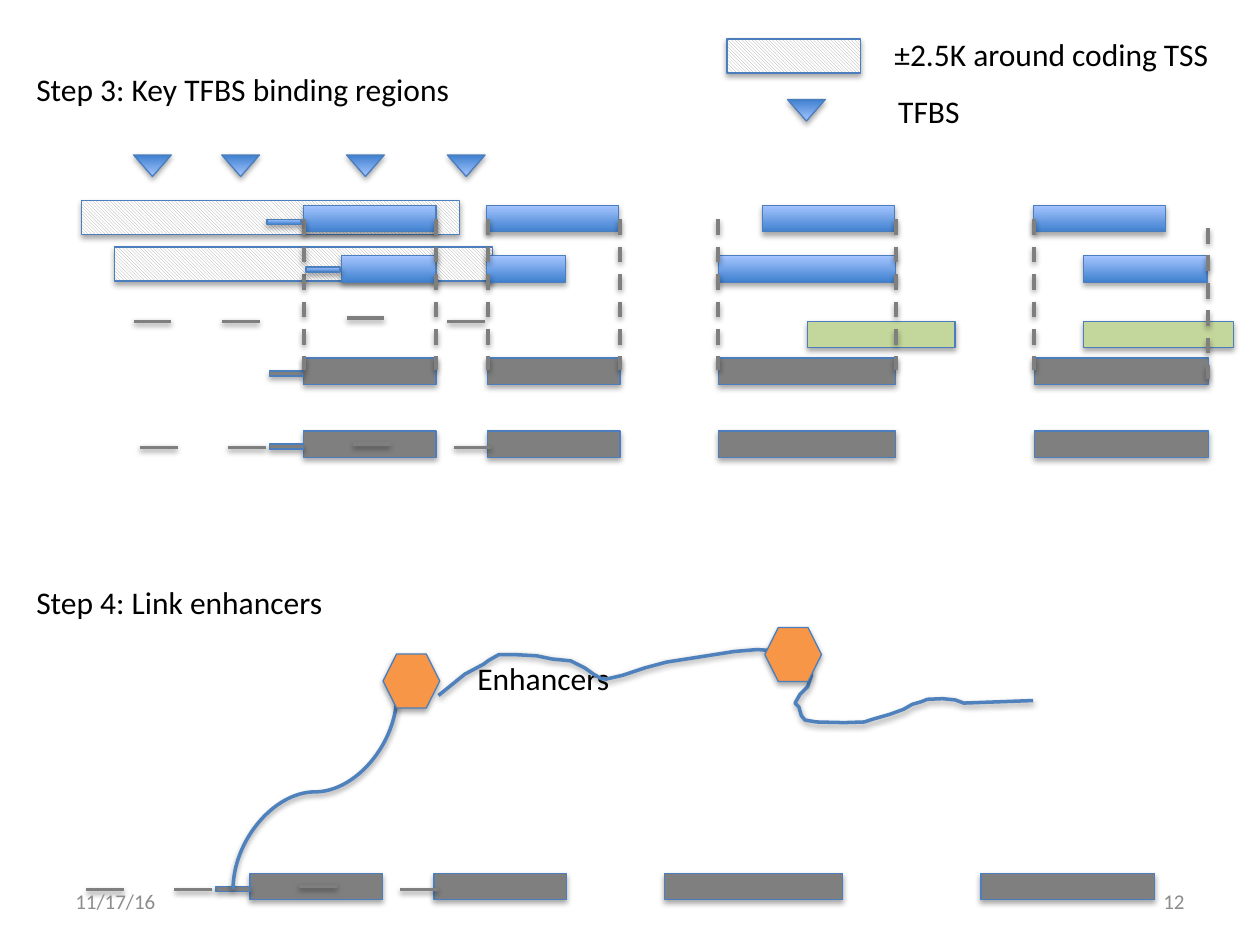
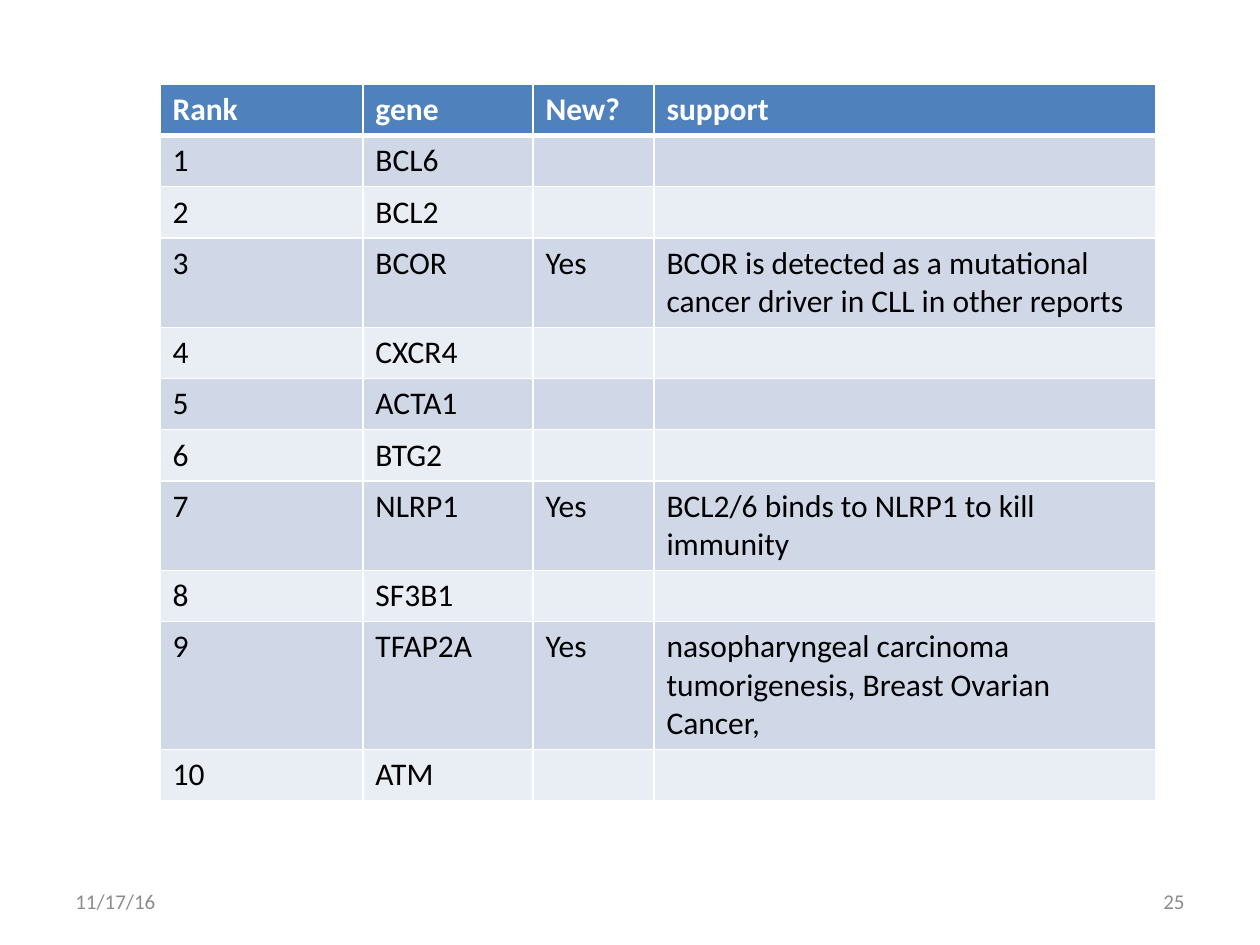
from dataclasses import dataclass

from pptx import Presentation
from pptx.dml.color import RGBColor
from pptx.enum.dml import MSO_LINE, MSO_PATTERN
from pptx.enum.shapes import MSO_CONNECTOR as Connector, MSO_SHAPE as Preset
from pptx.enum.text import MSO_ANCHOR as Anchor, PP_ALIGN as Align
from pptx.oxml import parse_xml
from pptx.oxml.ns import nsdecls
from pptx.util import Inches, Pt

FONT = "Calibri"
COLORS = {
    "text": "000000", "footer": "8C8C8C", "white": "FFFFFF",
    "outline": "4B7EBC", "accent": "4F81BD", "hatch": "A6A6A6",
    "deep": "3F80CE", "pale": "A4C4FF", "gray": "7F7F7F",
    "green": "C3D69B", "orange": "F79646",
    "band": "D0D8E8", "band_light": "E9EDF4",
}

# The slide is a grid of 100 columns by 75 rows.
SLIDE_WIDTH, SLIDE_HEIGHT = Inches(10), Inches(7.5)
COLUMN, ROW = SLIDE_WIDTH / 100, SLIDE_HEIGHT / 75
BAR = 2.1
THIN = 0.4
MARK = 3

# Transcript pieces as (left, width) in columns of their track.
EXONS = [(14.1, 10.5), (28.7, 10.5), (47, 14.1), (72.1, 13.8)]
UTR = (11.4, 2.7)
SITES = [1.1, 8.1, 18, 26]

LOOP = [
    (0, 4.4), (2.1, 2.7), (3.6, 1.9), (4, 1.6), (4.8, 1.15), (6, 1.15),
    (7.8, 1.25), (9, 1.5), (10.5, 1.65), (11.6, 2.2), (12.3, 2.7),
    (12.9, 3.05), (13.3, 3.1), (14.6, 2.8), (16.4, 2.2), (18.1, 1.75),
    (21.6, 1.2), (23.5, 0.9), (25.3, 0.75), (27.4, 0.9), (28.1, 1.7),
    (29.3, 2), (29.6, 2.8), (29.3, 3.7), (28.7, 4.3), (28.3, 5),
    (28.6, 5.3), (28.8, 6), (29.1, 6.35), (30, 6.5), (32.2, 6.55),
    (33.8, 6.5), (34.4, 6.3), (35.8, 5.9), (36.9, 5.5), (37.6, 5.1),
    (38.3, 4.9), (38.8, 4.7), (40, 4.65), (41, 4.75), (41.7, 5), (47.2, 4.8),
]

GENES = [
    ("Rank", "gene", "New?", "support"),
    ("1", "BCL6", "", ""),
    ("2", "BCL2", "", ""),
    ("3", "BCOR", "Yes",
     "BCOR is detected as a mutational cancer driver in CLL in other reports"),
    ("4", "CXCR4", "", ""),
    ("5", "ACTA1", "", ""),
    ("6", "BTG2", "", ""),
    ("7", "NLRP1", "Yes", "BCL2/6 binds to NLRP1 to kill immunity"),
    ("8", "SF3B1", "", ""),
    ("9", "TFAP2A", "Yes",
     "nasopharyngeal carcinoma tumorigenesis, Breast Ovarian Cancer,"),
    ("10", "ATM", "", ""),
]


@dataclass
class Box:
    """An area of the slide, in grid columns and rows."""
    left: float
    top: float
    width: float
    height: float

    def inner(self, left, top, width, height):
        return Box(self.left + left, self.top + top, width, height)

    def point(self, x, y):
        return round((self.left + x) * COLUMN), round((self.top + y) * ROW)

    def frame(self):
        return (*self.point(0, 0), round(self.width * COLUMN), round(self.height * ROW))


def color(name):
    return RGBColor.from_string(COLORS[name])


def style_span(span, size, shade, bold=False):
    span.font.name, span.font.size, span.font.bold = FONT, Pt(size), bold
    span.font.color.rgb = color(shade)


# Drawing helpers
def cast_shadow(shape, opacity=35, distance=23000):
    shape.element.spPr.append(parse_xml(
        f'<a:effectLst {nsdecls("a")}><a:outerShdw blurRad="40000" dist="{distance}" '
        f'dir="5400000" rotWithShape="0"><a:srgbClr val="000000">'
        f'<a:alpha val="{opacity * 1000}"/></a:srgbClr></a:outerShdw></a:effectLst>'))


def style_stroke(stroke, shade, width):
    stroke.line.color.rgb = color(shade)
    stroke.line.width = Pt(width)
    cast_shadow(stroke, 38, 20000)


def add_block(page, box, paint, preset=Preset.RECTANGLE, turn=0):
    block = page.shapes.add_shape(preset, *box.frame())
    block.rotation = turn
    if paint == "gradient":
        block.fill.gradient()
        block.fill.gradient_angle = 90
        for stop, shade in zip(block.fill.gradient_stops, ("deep", "pale")):
            stop.color.rgb = color(shade)
    elif paint == "hatch":
        block.fill.patterned()
        block.fill.pattern = MSO_PATTERN.LIGHT_DOWNWARD_DIAGONAL
        block.fill.fore_color.rgb = color("hatch")
        block.fill.back_color.rgb = color("white")
    else:
        block.fill.solid()
        block.fill.fore_color.rgb = color(paint)
    block.line.color.rgb = color("outline")
    block.line.width = Pt(0.75)
    cast_shadow(block)


def add_line(page, start, end, width=2, dash=None):
    line = page.shapes.add_connector(Connector.STRAIGHT, *start, *end)
    line.line.dash_style = dash
    style_stroke(line, "gray", width)


def add_label(page, box, text, size=18, shade="text", wrap=False,
              align=Align.LEFT, anchor=Anchor.TOP):
    frame = page.shapes.add_textbox(*box.frame()).text_frame
    frame.word_wrap, frame.vertical_anchor = wrap, anchor
    frame.text = text
    para = frame.paragraphs[0]
    para.alignment = align
    style_span(para.runs[0], size, shade)


def add_bars(page, track, spans, paint, top=0, height=BAR):
    for left, width in spans:
        add_block(page, track.inner(left, top, width, height), paint)


def add_triangle(page, area, left, top):
    add_block(page, area.inner(left, top, MARK, 1.7), "gradient",
              Preset.ISOSCELES_TRIANGLE, turn=180)


def add_site_marks(page, track, top):
    for index, left in enumerate(SITES):
        level = top - 0.25 * (index == 2)
        add_line(page, track.point(left, level), track.point(left + MARK, level))


def add_gene(page, track):
    add_bars(page, track, EXONS, "gray")
    add_bars(page, track, [UTR], "gray", top=1.05, height=THIN)


def add_gene_with_sites(page, track):
    add_gene(page, track)
    add_site_marks(page, track, 1.3)


# Regions of the pipeline slide
def add_binding_regions(page, area):
    add_label(page, area.inner(-8.1, -7.2, 35.3, 4), "Step 3: Key TFBS binding regions")
    add_bars(page, area, [(-0.9, 30)], "hatch", top=7.3, height=2.7)
    add_bars(page, area, [(-3.5, 30)], "hatch", top=3.6, height=2.7)

    # Transcripts and other regions
    add_bars(page, area, [(left, 10.5) for left in (14.1, 28.6, 50.5, 72)],
             "gradient", top=4)
    add_bars(page, area, [(17.1, 7.5), (28.6, 6.3), (47, 14.1), (76, 9.8)],
             "gradient", top=8)
    add_bars(page, area, [(54.1, 11.7), (76, 11.9)], "green", top=13.2)
    add_gene(page, area.inner(0, 16.1, area.width, BAR))

    # Exon boundaries
    for left, width in EXONS:
        for x in (left, left + width):
            top = 5.8 if x > 85 else 5.1
            add_line(page, area.point(x, top), area.point(x, top + 12),
                     2.25, MSO_LINE.DASH)

    add_bars(page, area, [(11.2, 2.7)], "gradient", top=5.1, height=THIN)
    add_bars(page, area, [(14.3, 2.7)], "gradient", top=8.9, height=THIN)

    # Binding sites, then the merged track
    sites = area.inner(-0.5, 0, area.width, area.height)
    for left in SITES:
        add_triangle(page, sites, left, 0)
    add_site_marks(page, sites, 13.2)
    add_gene_with_sites(page, area.inner(0, 21.9, area.width, BAR))


def add_enhancer_links(page, area):
    add_gene_with_sites(page, area.inner(3.85, 23.5, 86, BAR))

    # Link that leaves the gene vertically: a horizontal curve turned by 90 degrees
    (x1, y1), (x2, y2) = (16.6, 24.8), (29.6, 9.3)
    middle_x, middle_y = (x1 + x2) / 2, (y1 + y2) / 2
    half_rise, half_run = (y1 - y2) / 2, (x2 - x1) / 2
    link = page.shapes.add_connector(
        Connector.CURVE,
        *area.point(middle_x + half_rise, middle_y + half_run),
        *area.point(middle_x - half_rise, middle_y - half_run))
    link.element.spPr.xfrm.set("rot", "5400000")
    style_stroke(link, "accent", 2)

    add_label(page, area.inner(35, 6, 12.7, 4), "Enhancers")

    # Chromatin loop
    loop = area.inner(32.9, 5, 47.2, 5.6)
    points = [loop.point(x, y) for x, y in LOOP]
    builder = page.shapes.build_freeform(*points[0])
    builder.add_line_segments(points[1:], close=False)
    strand = builder.convert_to_shape()
    strand.fill.background()
    style_stroke(strand, "accent", 2)

    for left, top in ((28.5, 6.1), (58.8, 4)):
        add_block(page, area.inner(left, top, 4.5, 4.3), "orange", Preset.HEXAGON)
    add_label(page, area.inner(0, 0, 25, 4), "Step 4: Link enhancers")


def add_legend(page, area):
    add_block(page, area.inner(0, 0.8, 10.6, 2.7), "hatch")
    add_label(page, area.inner(12.3, 0, 27.3, 4), "±2.5K around coding TSS")
    add_triangle(page, area, 4.8, 5.6)
    add_label(page, area.inner(12.6, 4.5, 6.9, 4), "TFBS")


# Region of the ranking slide
def set_borders(cell, bottom):
    for side, width in (("L", 1), ("R", 1), ("T", 1), ("B", bottom)):
        cell._tc.get_or_add_tcPr().append(parse_xml(
            f'<a:ln{side} {nsdecls("a")} w="{Pt(width)}"><a:solidFill>'
            f'<a:srgbClr val="{COLORS["white"]}"/></a:solidFill></a:ln{side}>'))


def add_gene_table(page, area):
    table = page.shapes.add_table(len(GENES), len(GENES[0]), *area.frame()).table
    for column, width in zip(table.columns, (16.1, 13.5, 9.6, 39.8)):
        column.width = round(width * COLUMN)
    for index, values in enumerate(GENES):
        header = index == 0
        table.rows[index].height = round(4.06 * ROW)
        paint = "accent" if header else "band" if index % 2 else "band_light"
        for cell, value in zip(table.rows[index].cells, values):
            set_borders(cell, 3 if header else 1)
            cell.fill.solid()
            cell.fill.fore_color.rgb = color(paint)
            cell.text = value
            for span in cell.text_frame.paragraphs[0].runs:
                style_span(span, 18, "white" if header else "text", header)


# Shared footer
def add_footer(page, area, number):
    for left, text, align in ((0, "11/17/16", Align.LEFT),
                              (area.width - 23.3, number, Align.RIGHT)):
        add_label(page, area.inner(left, 0, 23.3, area.height), text, 12, "footer",
                  True, align, Anchor.MIDDLE)


def main():
    deck = Presentation()
    deck.slide_width, deck.slide_height = SLIDE_WIDTH, SLIDE_HEIGHT
    blank = deck.slide_layouts[6]
    footer = Box(5, 69.5, 90, 4)

    pipeline = deck.slides.add_slide(blank)
    add_binding_regions(pipeline, Box(10, 12.3, 86, 24))
    add_enhancer_links(pipeline, Box(1.9, 45.8, 90, 25.6))
    add_legend(pipeline, Box(57.7, 2.3, 39.6, 8.5))
    add_footer(pipeline, footer, "12")

    ranking = deck.slides.add_slide(blank)
    add_gene_table(ranking, Box(12.7, 6.7, 79, 56.4))
    add_footer(ranking, footer, "25")

    deck.save("out.pptx")


if __name__ == "__main__":
    main()
